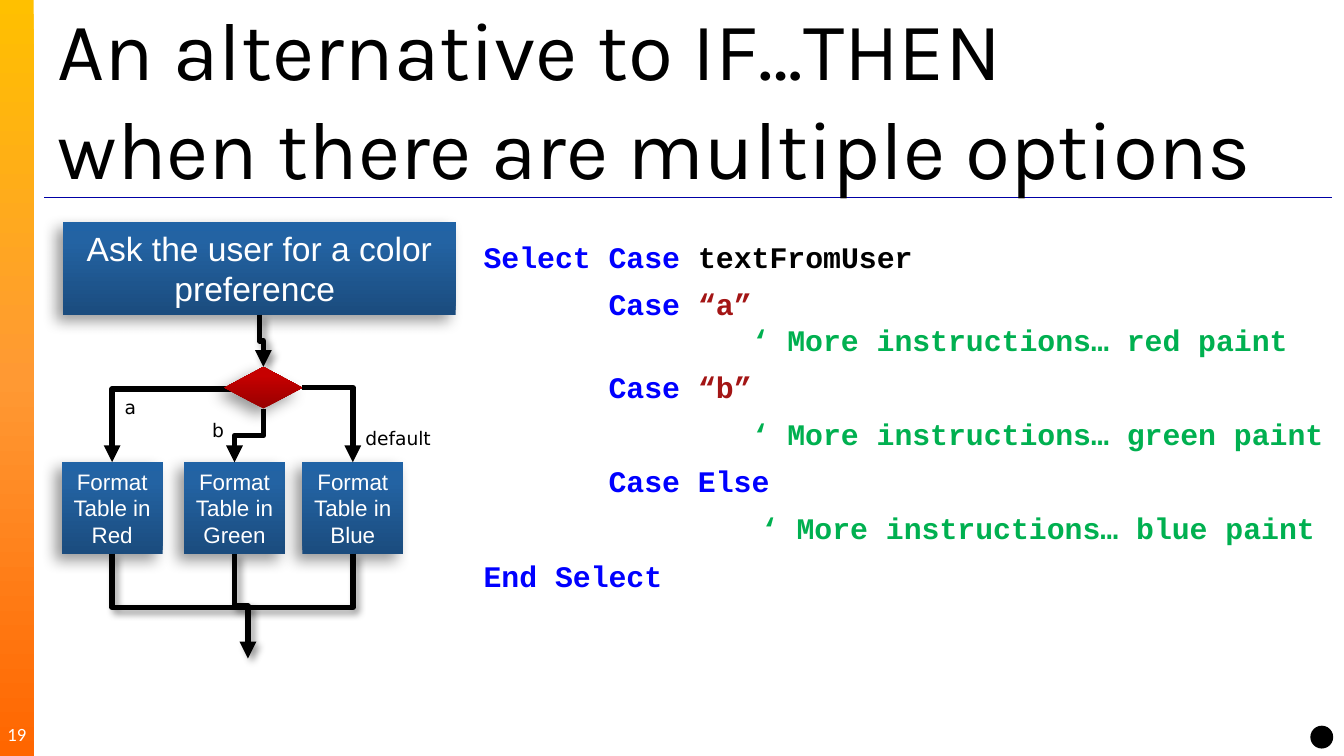
from lxml import etree
from pptx import Presentation
from pptx.dml.color import RGBColor
from pptx.enum.shapes import MSO_CONNECTOR as Link, MSO_SHAPE as Kind
from pptx.enum.text import MSO_ANCHOR as Anchor, PP_ALIGN as Align
from pptx.oxml import parse_xml
from pptx.oxml.ns import qn
from pptx.util import Inches, Pt

WIDE = 10
HIGH = WIDE * 9 / 16
BLACK = RGBColor(0, 0, 0)
WHITE = RGBColor(255, 255, 255)
RULE = RGBColor(0, 0, 0xA5)
WORD = RGBColor(0, 0, 255)
QUOTE = RGBColor(0xA3, 0x15, 0x15)
NOTE = RGBColor(0, 0xB0, 0x50)
SUN = [(0, RGBColor(255, 0xC0, 0)), (50, RGBColor(255, 0x99, 0x33)),
       (100, RGBColor(255, 0x66, 0))]
BLUE = [(0, RGBColor(0x1B, 0x4C, 0x7E)), (80, RGBColor(0x23, 0x63, 0xA3)),
        (100, RGBColor(0x20, 0x63, 0xA6))]
RED = [(0, RGBColor(0x98, 0, 0)), (80, RGBColor(0xC6, 0, 0)),
       (100, RGBColor(0xC7, 0, 0))]
SPACE = 'xmlns:a="http://schemas.openxmlformats.org/drawingml/2006/main"'

CODE = [
    [("Select Case", WORD), (" textFromUser", BLACK)],
    [("       Case ", WORD), ("“a”\v", QUOTE),
     ("               ‘ More instructions… red paint", NOTE)],
    [("       Case ", WORD), ("“b”", QUOTE)],
    [("               ‘ More instructions… green paint", NOTE)],
    [("       Case Else", WORD)],
    [("\t        ‘ More instructions… blue paint", NOTE)],
    [("End Select", WORD)],
]


def style(para, name, size, color=None, align=None):
    para.font.name, para.font.size = name, Pt(size)
    if color is not None:
        para.font.color.rgb = color
    if align is not None:
        para.alignment = align


def shade(shape, stops, angle):
    """Fill a shape with a linear gradient of (percent, color) stops."""
    marks = "".join(f'<a:gs pos="{pos * 1000}"><a:srgbClr val="{color}"/></a:gs>'
                    for pos, color in stops)
    fill = parse_xml(f'<a:gradFill {SPACE} rotWithShape="1"><a:gsLst>{marks}</a:gsLst>'
                     f'<a:lin ang="{angle * 60000}" scaled="0"/></a:gradFill>')
    shape._element.spPr.find(qn("a:prstGeom")).addnext(fill)


def cast(effects, blur, dist, angle):
    """Put a soft black shadow in an effect list."""
    effects.append(parse_xml(
        f'<a:outerShdw {SPACE} blurRad="{Pt(blur)}" dist="{Pt(dist)}" '
        f'dir="{angle * 60000}" algn="ctr" rotWithShape="0"><a:srgbClr val="000000">'
        '<a:alpha val="40000"/></a:srgbClr></a:outerShdw>'))


def solid(slide, kind, box):
    """Add a preset shape without outline or shadow."""
    shape = slide.shapes.add_shape(kind, *map(Inches, box))
    shape.shadow.inherit = False
    shape.line.fill.background()
    return shape


def node(slide, kind, box, stops, text="", size=12):
    """Add one shaded, shadowed step of the flow chart."""
    shape = solid(slide, kind, box)
    shade(shape, stops, 270)
    cast(shape._element.spPr.find(qn("a:effectLst")), 8, 5, 135)
    if text:
        frame = shape.text_frame
        frame.margin_left = frame.margin_right = Inches(0.05)
        frame.margin_top = frame.margin_bottom = Inches(0.05)
        frame.vertical_anchor = Anchor.MIDDLE
        frame.text = text
        style(frame.paragraphs[0], "Arial", size, WHITE, Align.CENTER)


def line(slide, kind, ends, color, width):
    link = slide.shapes.add_connector(kind, *map(Inches, ends))
    link.line.color.rgb, link.line.width = color, Pt(width)
    return link, etree.SubElement(link._element.spPr, qn("a:effectLst"))


def elbow(slide, start, end, bends, down=True, head=True, shadow=False):
    """Join two points by a bent line that sets out downwards or sideways."""
    (x1, y1), (x2, y2) = start, end
    ends = (x1, y1, x2, y2)
    right = x2 > x1
    if down:
        # A quarter turn swaps width and height about the middle.
        midx, midy = (x1 + x2) / 2, (y1 + y2) / 2
        half, rise = (y2 - y1) / 2, abs(x2 - x1) / 2
        if right:
            half = -half
        ends = (midx - half, midy - rise, midx + half, midy + rise)
    link, effects = line(slide, Link.ELBOW, ends, BLACK, 3)
    props = link._element.spPr
    props.find(qn("a:prstGeom")).set("prst", f"bentConnector{bends + 1}")
    if down:
        props.find(qn("a:xfrm")).set("rot", str((270 if right else 90) * 60000))
    if head:
        etree.SubElement(props.find(qn("a:ln")), qn("a:tailEnd"), type="triangle")
    if shadow:
        cast(effects, 4, 3, 45)


def label(slide, box, text, name, size, color=BLACK, align=None):
    frame = slide.shapes.add_textbox(*map(Inches, box)).text_frame
    frame.word_wrap = True
    frame.text = text
    style(frame.paragraphs[0], name, size, color, align)
    return frame


def side(slide, box):
    x, y, w, h = box
    shade(solid(slide, Kind.RECTANGLE, box), SUN, 90)
    frame = label(slide, (x, y + h - 0.31, w, 0.3), "19", "Calibri", 10, WHITE,
                  Align.CENTER)
    frame.margin_left = frame.margin_right = 0
    frame.margin_top = frame.margin_bottom = 0
    frame.vertical_anchor = Anchor.MIDDLE


def title(slide, box):
    x, y, w, h = box
    base = y + h + 0.08
    line(slide, Link.STRAIGHT, (x, base, x + w, base), RULE, 0.75)
    frame = label(slide, box,
                  "An alternative to IF…THEN\vwhen there are multiple options",
                  "Karla", 44)
    frame.vertical_anchor = Anchor.MIDDLE


def code(slide, box):
    frame = slide.shapes.add_textbox(*map(Inches, box)).text_frame
    frame.word_wrap = True
    for i, parts in enumerate(CODE):
        para = frame.paragraphs[0]
        if i:
            para = frame.add_paragraph()
            para.space_before = Pt(6)
        if parts[0][0].startswith("\t"):
            tabs = etree.SubElement(para._p.get_or_add_pPr(), qn("a:tabLst"))
            etree.SubElement(tabs, qn("a:tab"), pos=str(Inches(1)), algn="l")
        style(para, "Courier New", 16)
        para.font.bold = True
        for text, color in parts:
            # A vertical tab becomes a line break.
            head, brk, _ = text.partition("\v")
            run = para.add_run()
            run.text = head
            run.font.color.rgb = color
            if brk:
                para.add_line_break()


def flow(slide, box):
    x, y, w, h = box
    wide, tall = 0.75, 0.68
    top = y + 1.79
    base = top + tall
    join = base + 0.4
    lefts = [x, x + 0.91, x + 1.79]
    red, green, blue = [left + wide / 2 for left in lefts]
    gate = (x + 1.21, y + 1.08, 0.58, 0.31)
    mid, level = gate[0] + gate[2] / 2, gate[1] + gate[3] / 2

    node(slide, Kind.FLOWCHART_PROCESS, (x + 0.01, y, w - 0.01, 0.69), BLUE,
         "Ask the user for a color preference ", 18)
    elbow(slide, (mid - 0.03, y + 0.69), (mid, gate[1]), 2, shadow=True)
    elbow(slide, (green, base), (green + 0.1, y + h), 2, shadow=True)
    for left, name in zip(lefts, ("Red", "Green", "Blue")):
        node(slide, Kind.FLOWCHART_PROCESS, (left, top, wide, tall), BLUE,
             f"Format Table in {name}")
    for start in (red, blue):
        elbow(slide, (start, base), (x + 1.37, join), 1, head=False, shadow=True)
    elbow(slide, (x + 1.33, level + 0.01), (red, top), 1, down=False)
    elbow(slide, (mid, gate[1] + gate[3]), (green, top), 2)
    elbow(slide, (gate[0] + gate[2], level), (blue, top), 1, down=False)
    for dx, dy, wide, text in ((0.37, 1.25, 0.33, "a"), (1.02, 1.42, 0.33, "b"),
                               (2.16, 1.48, 0.75, "default")):
        label(slide, (x + dx, y + dy, wide, 0.27), text, "DejaVu Sans", 10)
    node(slide, Kind.FLOWCHART_DECISION, gate, RED)


def main():
    deck = Presentation()
    deck.slide_width, deck.slide_height = Inches(WIDE), Inches(HIGH)
    slide = deck.slides.add_slide(deck.slide_layouts[6])
    side(slide, (0, 0, 0.25, HIGH))
    title(slide, (0.33, 0.06, 9.58, 1.33))
    code(slide, (3.5, 1.73, 6.5, 3.39))
    flow(slide, (0.46, 1.65, 2.93, 3.25))
    dot = solid(slide, Kind.OVAL, (9.75, 5.4, 0.17, 0.17))
    dot.fill.solid()
    dot.fill.fore_color.rgb = BLACK
    deck.save("out.pptx")


if __name__ == "__main__":
    main()
